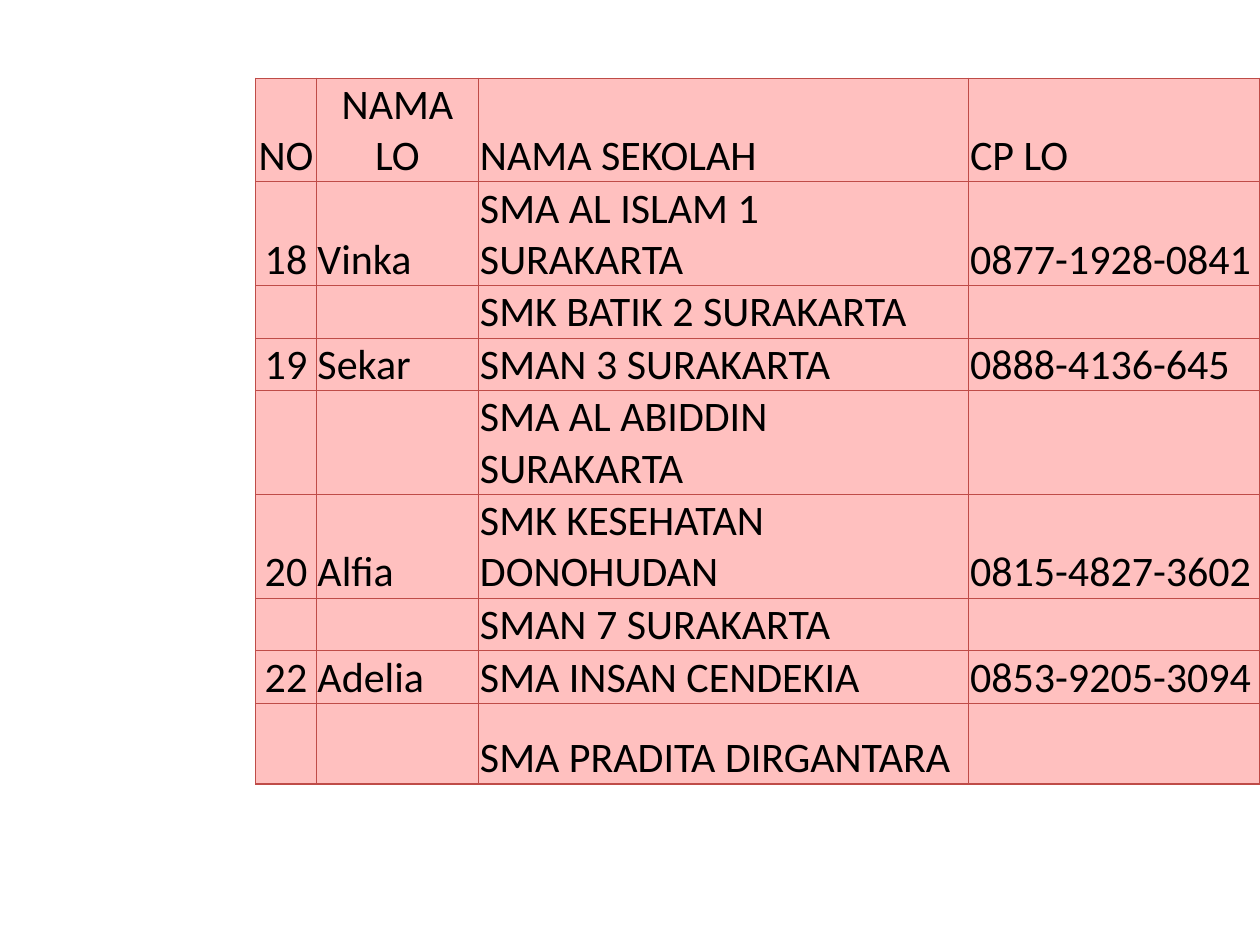
"""Build a slide with a table of liaison officers, schools and phone numbers."""
from lxml.etree import SubElement
from pptx import Presentation
from pptx.dml.color import RGBColor
from pptx.enum.text import MSO_ANCHOR, PP_ALIGN
from pptx.oxml.ns import qn
from pptx.util import Inches, Pt

COLORS = {"fill": "FFC0BF", "border": "BF4C48", "text": "000000"}
FONT = {"name": "Calibri", "size": Pt(24), "bold": False}
CELL = {
    "vertical_anchor": MSO_ANCHOR.BOTTOM,
    "margin_left": Inches(0.01),
    "margin_right": Inches(0.01),
    "margin_top": Inches(0.01),
    "margin_bottom": 0,
}
COLS = [0.48, 1.29, 3.89, 2.31]
ONE, TWO, LAST = 0.41, 0.82, 0.64
ROWS = [
    (TWO, "NO", "NAMA LO", "NAMA SEKOLAH", "CP LO"),
    (TWO, "18", "Vinka", "SMA AL ISLAM 1 SURAKARTA", "0877-1928-0841"),
    (ONE, "", "", "SMK BATIK 2 SURAKARTA", ""),
    (ONE, "19", "Sekar", "SMAN 3 SURAKARTA", "0888-4136-645"),
    (TWO, "", "", "SMA AL ABIDDIN SURAKARTA", ""),
    (TWO, "20", "Alfia", "SMK KESEHATAN DONOHUDAN", "0815-4827-3602"),
    (ONE, "", "", "SMAN 7 SURAKARTA", ""),
    (ONE, "22", "Adelia", "SMA INSAN CENDEKIA", "0853-9205-3094"),
    (LAST, "", "", "SMA PRADITA DIRGANTARA", ""),
]


def add_borders(cell):
    """Draw a thin line on each side of the cell."""
    tcPr = cell._tc.get_or_add_tcPr()
    for side in ("lnL", "lnR", "lnT", "lnB"):
        ln = SubElement(tcPr, qn(f"a:{side}"), w=str(Pt(0.75)))
        fill = SubElement(ln, qn("a:solidFill"))
        SubElement(fill, qn("a:srgbClr"), val=COLORS["border"])


prs = Presentation()
prs.slide_width, prs.slide_height = Inches(10), Inches(7.5)
s = prs.slides.add_slide(prs.slide_layouts[6])

width, height = sum(COLS), sum(row[0] for row in ROWS)
left = prs.slide_width - Inches(width)
tbl = s.shapes.add_table(
    len(ROWS), len(COLS), left, Inches(0.62), Inches(width), Inches(height)
).table
tbl.first_row = tbl.horz_banding = False
for col, w in zip(tbl.columns, COLS):
    col.width = Inches(w)

for i, (h, *texts) in enumerate(ROWS):
    tbl.rows[i].height = Inches(h)
    for j, text in enumerate(texts):
        cell = tbl.cell(i, j)
        add_borders(cell)
        cell.fill.solid()
        cell.fill.fore_color.rgb = RGBColor.from_string(COLORS["fill"])
        for key, value in CELL.items():
            setattr(cell, key, value)
        if not text:
            continue
        p = cell.text_frame.paragraphs[0]
        centred = j == 0 or (i == 0 and j == 1)
        p.alignment = PP_ALIGN.CENTER if centred else PP_ALIGN.LEFT
        r = p.add_run()
        r.text = text
        for key, value in FONT.items():
            setattr(r.font, key, value)
        r.font.color.rgb = RGBColor.from_string(COLORS["text"])

prs.save("out.pptx")
